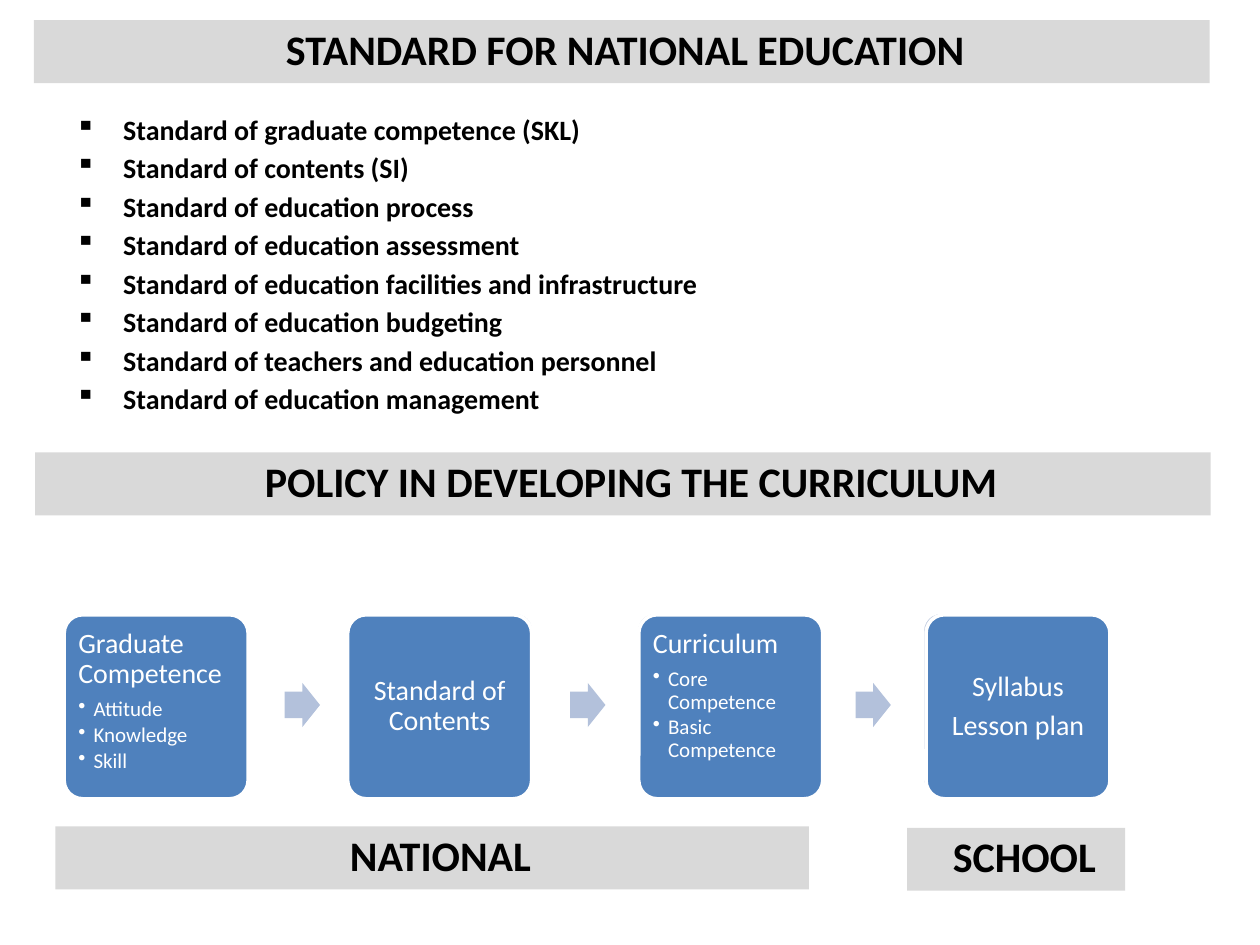
from dataclasses import dataclass

from lxml import etree
from pptx import Presentation
from pptx.dml.color import RGBColor
from pptx.enum.shapes import MSO_SHAPE
from pptx.enum.text import MSO_ANCHOR, PP_ALIGN
from pptx.oxml.ns import qn
from pptx.util import Inches, Pt

RECTANGLE = MSO_SHAPE.RECTANGLE
ROUNDED = MSO_SHAPE.ROUNDED_RECTANGLE
ARROW = MSO_SHAPE.RIGHT_ARROW
TOP, MIDDLE = MSO_ANCHOR.TOP, MSO_ANCHOR.MIDDLE
LEFT, CENTER = PP_ALIGN.LEFT, PP_ALIGN.CENTER


@dataclass(frozen=True)
class Theme:
    font: str = "Calibri"
    ink: str = "000000"
    paper: str = "FFFFFF"
    bar: str = "D9D9D9"
    card: str = "4F81BD"
    card_back: str = "C2CDE1"
    arrow: str = "B3C1DB"
    heading_size: int = 24
    text_size: int = 16
    detail_size: int = 12


theme = Theme()
presentation = Presentation()
presentation.slide_width = Inches(10)
presentation.slide_height = Inches(7.5)
column = presentation.slide_width / 100
row = presentation.slide_height / 75
slide = presentation.slides.add_slide(presentation.slide_layouts[6])


def add_block(kind, left, top, width, height, fill, outlined=False):
    shape = slide.shapes.add_shape(
        kind, round(left * column), round(top * row), round(width * column), round(height * row)
    )
    shape.shadow.inherit = False
    shape.fill.solid()
    shape.fill.fore_color.rgb = RGBColor.from_string(fill)
    if outlined:
        shape.line.color.rgb = RGBColor.from_string(theme.paper)
        shape.line.width = Pt(2)
    else:
        shape.line.fill.background()
    return shape


def add_line(frame, text, size, color, bold=False, align=LEFT, spacing=1.0,
             before=0, after=0, bullet=None, indent=0):
    paragraph = frame.paragraphs[0]
    if paragraph.runs:
        paragraph = frame.add_paragraph()
    paragraph.alignment = align
    paragraph.line_spacing = spacing
    paragraph.space_before = Pt(before)
    paragraph.space_after = Pt(after)
    if bullet:
        properties = paragraph._p.get_or_add_pPr()
        properties.set("marL", str(round(indent * column)))
        properties.set("indent", str(round(-indent * column)))
        etree.SubElement(properties, qn("a:buChar")).set("char", bullet)
    run = paragraph.add_run()
    run.text = text
    run.font.name = theme.font
    run.font.size = Pt(size)
    run.font.bold = bold
    run.font.color.rgb = RGBColor.from_string(color)


standards = [
    "graduate competence (SKL)",
    "contents (SI)",
    "education process",
    "education assessment",
    "education facilities and infrastructure",
    "education budgeting",
    "teachers and education personnel",
    "education management",
]
standards_box = slide.shapes.add_textbox(
    round(5 * column), round(8.4 * row), round(91.7 * column), round(26.8 * row)
)
standards_box.text_frame.word_wrap = True
for standard in standards:
    add_line(standards_box.text_frame, f"Standard of {standard}", theme.text_size, theme.ink,
             bold=True, before=2.8, bullet="▪", indent=3.8)

bars = [
    ("STANDARD FOR NATIONAL EDUCATION ", 2.7, 1.6, 93.3),
    ("POLICY IN DEVELOPING THE CURRICULUM", 2.8, 35.9, 93.3),
    ("NATIONAL", 4.4, 65.6, 59.8),
    ("SCHOOL", 72, 65.7, 17.3),
]
for text, left, top, width in bars:
    frame = add_block(RECTANGLE, left, top, width, 5, theme.bar).text_frame
    frame.word_wrap = True
    frame.vertical_anchor = MIDDLE
    frame.margin_left, frame.margin_right = round(2.9 * column), round(1.6 * column)
    frame.margin_top = frame.margin_bottom = round(0.8 * row)
    add_line(frame, text, theme.heading_size, theme.ink, bold=True, align=CENTER, spacing=0.9)

card_size = 14.6
stages = [
    (["Graduate Competence"], ["Attitude", "Knowledge", "Skill"], 0),
    (["Standard of Contents"], [], -0.2),
    (["Curriculum"], ["Core Competence", "Basic Competence"], 0.2),
    (["Syllabus", "Lesson plan"], [], 0.3),
]
for index, (titles, details, nudge) in enumerate(stages):
    left = 5.1 + 22.7 * index
    back = add_block(ROUNDED, left, 48.6, card_size, card_size, theme.card_back, outlined=True)
    card = add_block(ROUNDED, left + nudge, 48.8, card_size, card_size, theme.card, outlined=True)
    back.adjustments[0] = card.adjustments[0] = 0.1
    frame = card.text_frame
    frame.word_wrap = True
    frame.vertical_anchor = TOP if details else MIDDLE
    frame.margin_left = frame.margin_right = round(0.7 * column)
    frame.margin_top = frame.margin_bottom = round(0.7 * row)
    for title in titles:
        add_line(frame, title, theme.text_size, theme.paper,
                 align=LEFT if details else CENTER, spacing=0.9, after=5.3)
    for detail in details:
        add_line(frame, detail, theme.detail_size, theme.paper,
                 spacing=0.9, after=1.7, bullet="•", indent=1.2)
    if index < len(stages) - 1:
        arrow = add_block(ARROW, 22.6 + 22.65 * index, 54.2, 2.8, 3.5, theme.arrow)
        arrow.adjustments[0] = 0.6
        arrow.adjustments[1] = 0.5

presentation.save("out.pptx")
